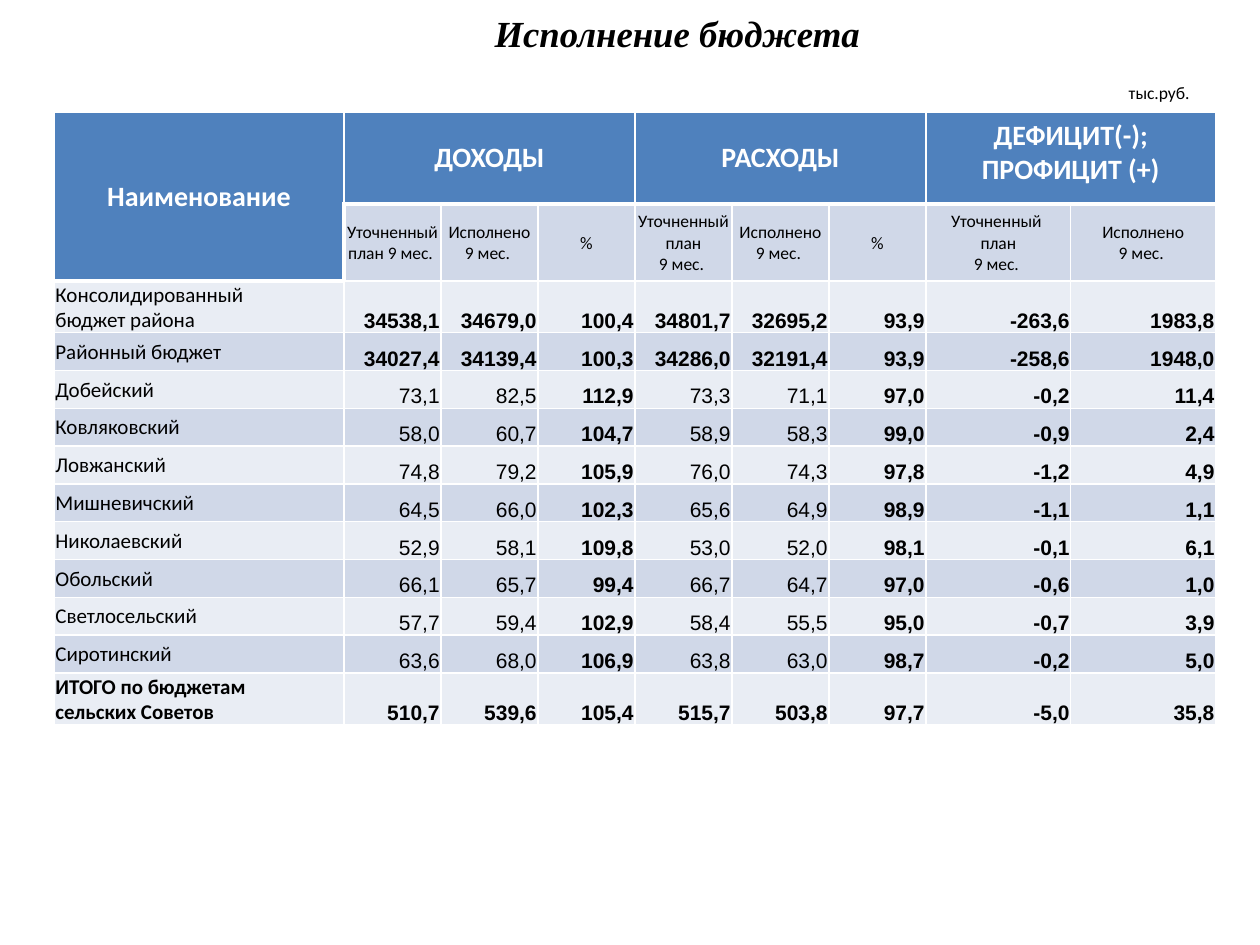
from pptx import Presentation
from pptx.dml.color import RGBColor
from pptx.enum.text import MSO_ANCHOR as Anchor, PP_ALIGN as Align
from pptx.oxml import parse_xml
from pptx.oxml.ns import nsdecls
from pptx.util import Inches, Pt

# Content
TITLE = "Исполнение бюджета"
UNIT = "тыс.руб."
GROUPS = [  # heading, first column, column count, anchor
    ("ДОХОДЫ", 1, 3, Anchor.MIDDLE),
    ("РАСХОДЫ", 4, 3, Anchor.MIDDLE),
    ("ДЕФИЦИТ(-); ПРОФИЦИТ (+)", 7, 2, Anchor.TOP),
]
NAME_HEADING = "Наименование"
SUBHEADINGS = [
    "Уточненный план 9 мес. ", "Исполнено 9 мес. ", "%",
    "Уточненный\nплан\n9 мес. ", "Исполнено 9 мес. ", "%",
    "Уточненный \nплан\n9 мес. ", "Исполнено\n9 мес. ",
]
BUDGETS = [
    ("Консолидированный\nбюджет района", "34538,1 34679,0 100,4 34801,7 32695,2 93,9 -263,6 1983,8"),
    ("Районный бюджет", "34027,4 34139,4 100,3 34286,0 32191,4 93,9 -258,6 1948,0"),
    ("Добейский", "73,1 82,5 112,9 73,3 71,1 97,0 -0,2 11,4"),
    ("Ковляковский", "58,0 60,7 104,7 58,9 58,3 99,0 -0,9 2,4"),
    ("Ловжанский", "74,8 79,2 105,9 76,0 74,3 97,8 -1,2 4,9"),
    ("Мишневичский", "64,5 66,0 102,3 65,6 64,9 98,9 -1,1 1,1"),
    ("Николаевский", "52,9 58,1 109,8 53,0 52,0 98,1 -0,1 6,1"),
    ("Обольский", "66,1 65,7 99,4 66,7 64,7 97,0 -0,6 1,0"),
    ("Светлосельский", "57,7 59,4 102,9 58,4 55,5 95,0 -0,7 3,9"),
    ("Сиротинский", "63,6 68,0 106,9 63,8 63,0 98,7 -0,2 5,0"),
    ("ИТОГО по бюджетам\nсельских Советов", "510,7 539,6 105,4 515,7 503,8 97,7 -5,0 35,8"),
]
PLAIN_COLUMNS = {1, 2, 4, 5}  # regular weight for single councils
TOTAL_ROW = len(BUDGETS) - 1
SUMMARY_ROWS = {0, 1, TOTAL_ROW}

COLORS = {"header": "4F81BD", "dark": "D0D8E8", "light": "E9EDF4",
          "white": "FFFFFF", "black": "000000"}

# Grid in inches
LEFT, TOP = 0.43, 0.89
COLUMN_WIDTHS = [2.3] + [0.77] * 6 + [1.15] * 2
ROW_HEIGHTS = [0.73, 0.61] + [0.41 if "\n" in name else 0.3 for name, _ in BUDGETS]
WIDE_INSETS = (0.1, 0.05, 0.1, 0.05)
TIGHT_INSETS = (0.01, 0.01, 0.01, 0)


def write(text_frame, text, size, font="Calibri", color="black", bold=False,
          italic=False, align=Align.LEFT):
    text_frame.text = text
    for paragraph in text_frame.paragraphs:
        paragraph.alignment = align
        for run in paragraph.runs:
            run.font.size, run.font.name = Pt(size), font
            run.font.bold, run.font.italic = bold, italic
            run.font.color.rgb = RGBColor.from_string(COLORS[color])


def fill_cell(cell, text, fill, size, anchor=Anchor.MIDDLE, insets=TIGHT_INSETS, **style):
    write(cell.text_frame, text, size, **style)
    cell.vertical_anchor = anchor
    (cell.margin_left, cell.margin_top,
     cell.margin_right, cell.margin_bottom) = map(Inches, insets)
    cell.fill.solid()
    cell.fill.fore_color.rgb = RGBColor.from_string(COLORS[fill])


def add_borders(cell, row, column):
    """White rules, thick around the blue heading block."""
    thick = {"L": row == 1 and column == 1,
             "R": row == 1 and column == 0,
             "T": (row == 1 and column > 0) or (row == 2 and column == 0),
             "B": (row == 0 and column > 0) or (row == 1 and column == 0)}
    properties = cell._tc.get_or_add_tcPr()
    for position, (side, is_thick) in enumerate(thick.items()):
        properties.insert(position, parse_xml(
            f'<a:ln{side} {nsdecls("a")} w="{Pt(3 if is_thick else 1)}"><a:solidFill>'
            f'<a:srgbClr val="{COLORS["white"]}"/></a:solidFill></a:ln{side}>'))


presentation = Presentation()
presentation.slide_width, presentation.slide_height = Inches(10), Inches(7.5)
slide = presentation.slides.add_slide(presentation.slide_layouts[5])

# Title
title = slide.shapes.title
title.left, title.top, title.width, title.height = map(Inches, (0.78, 0, 9.19, 0.52))
write(title.text_frame, TITLE, 21, font="Times New Roman", bold=True, italic=True,
      align=Align.CENTER)
title.text_frame.vertical_anchor = Anchor.MIDDLE

# Unit of measure
unit = slide.shapes.add_textbox(*map(Inches, (8.86, 0.6, 0.69, 0.27)))
unit.text_frame.word_wrap = False
write(unit.text_frame, UNIT, 10)

# Table grid
table = slide.shapes.add_table(
    len(ROW_HEIGHTS), len(COLUMN_WIDTHS), Inches(LEFT), Inches(TOP),
    Inches(sum(COLUMN_WIDTHS)), Inches(sum(ROW_HEIGHTS))).table
for column, width in zip(table.columns, COLUMN_WIDTHS):
    column.width = Inches(width)
for row, height in zip(table.rows, ROW_HEIGHTS):
    row.height = Inches(height)

# Headings
heading_style = dict(fill="header", size=16, insets=WIDE_INSETS, color="white",
                     bold=True, align=Align.CENTER)
table.cell(0, 0).merge(table.cell(1, 0))
fill_cell(table.cell(0, 0), NAME_HEADING, **heading_style)
for heading, first, count, anchor in GROUPS:
    table.cell(0, first).merge(table.cell(0, first + count - 1))
    fill_cell(table.cell(0, first), heading, anchor=anchor, **heading_style)
for column, text in enumerate(SUBHEADINGS, 1):
    fill_cell(table.cell(1, column), text, "dark", 10, align=Align.CENTER)

# Budget rows
for index, (name, values) in enumerate(BUDGETS):
    band = "dark" if index % 2 else "light"
    fill_cell(table.cell(index + 2, 0), name, band, 12, bold=index == TOTAL_ROW)
    for column, value in enumerate(values.split(), 1):
        fill_cell(table.cell(index + 2, column), value, band, 12, anchor=Anchor.BOTTOM,
                  font="Arial", align=Align.RIGHT,
                  bold=index in SUMMARY_ROWS or column not in PLAIN_COLUMNS)

# Borders
for row in range(len(ROW_HEIGHTS)):
    for column in range(len(COLUMN_WIDTHS)):
        add_borders(table.cell(row, column), row, column)

presentation.save("out.pptx")
